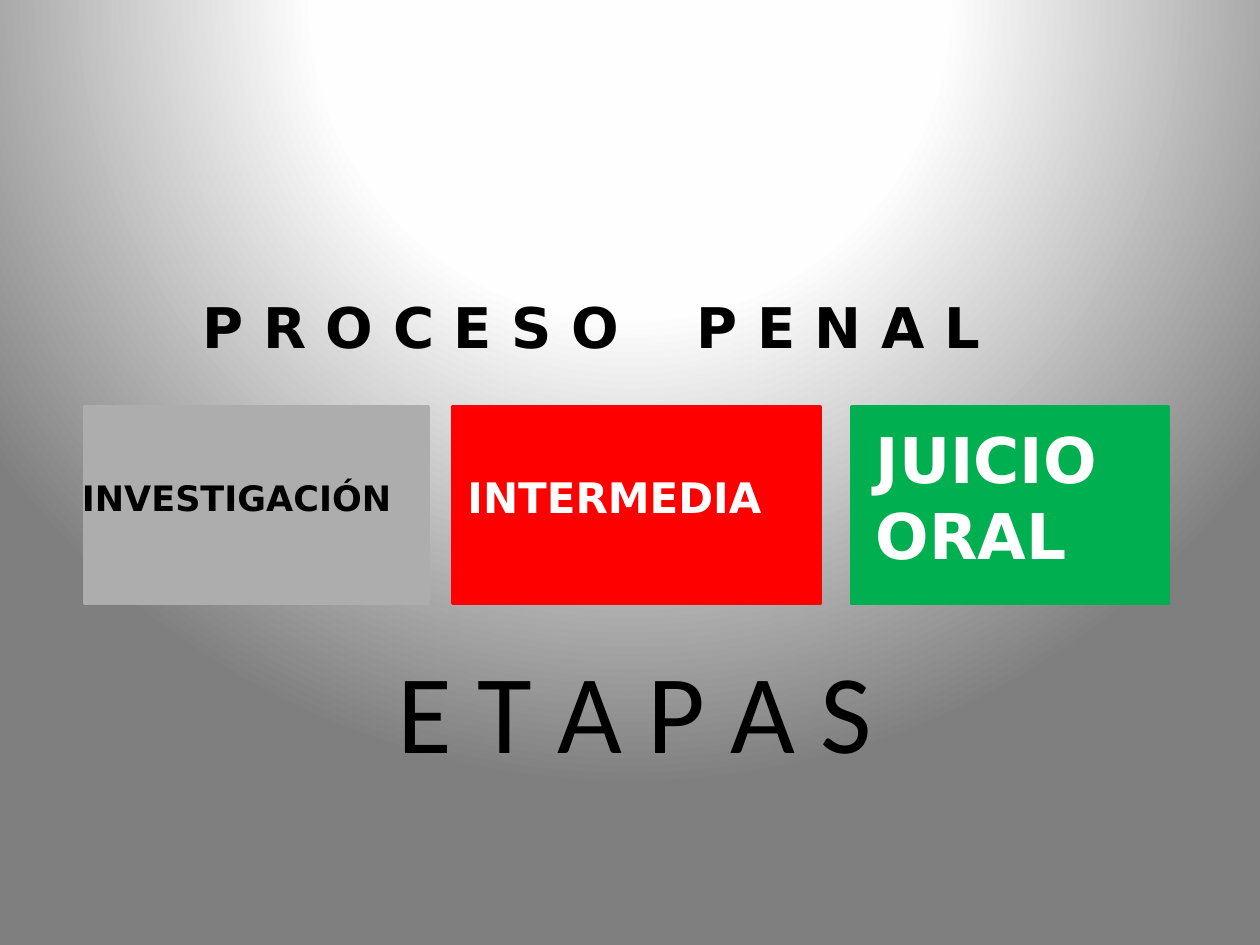
from lxml.etree import fromstring
from pptx import Presentation
from pptx.dml.color import RGBColor
from pptx.enum.shapes import MSO_SHAPE
from pptx.enum.text import MSO_ANCHOR, PP_ALIGN
from pptx.util import Pt

PX = 9144
NS = "http://schemas.openxmlformats.org/drawingml/2006/main"


def tint(hue):
    return RGBColor.from_string(hue)


def style(run, size, face, hue, bold):
    font = run.font
    font.size = Pt(size)
    font.name = face
    font.bold = bold
    font.color.rgb = tint(hue)


deck = Presentation()
deck.slide_width = 1000 * PX
deck.slide_height = 750 * PX
slide = deck.slides.add_slide(deck.slide_layouts[5])

stops = "".join(
    f'<a:gs pos="{pos * 1000}"><a:srgbClr val="{hue}"/></a:gs>'
    for pos, hue in [(0, "FFFFFF"), (40, "FEFEFE"), (100, "7F7F7F")]
)
glow = fromstring(
    f'<a:gradFill xmlns:a="{NS}" rotWithShape="1"><a:gsLst>{stops}</a:gsLst>'
    '<a:path path="circle"><a:fillToRect l="50000" t="-80000" r="50000" b="180000"/>'
    "</a:path></a:gradFill>"
)
slide.background.fill.solid()
solid = slide.element.find(f".//{{{NS}}}solidFill")
solid.getparent().replace(solid, glow)

title = slide.shapes.title
title.left, title.top, title.width, title.height = [n * PX for n in (54, 500, 900, 125)]
title.text_frame.text = "E T A P A S"
title.text_frame.vertical_anchor = MSO_ANCHOR.MIDDLE
line = title.text_frame.paragraphs[0]
line.alignment = PP_ALIGN.CENTER
style(line.runs[0], 64, "Calibri", "000000", False)

for left, width, hue in [(67, 273, "ADADAD"), (359, 292, "FF0000"), (676, 251, "00B050")]:
    panel = slide.shapes.add_shape(
        MSO_SHAPE.RECTANGLE, left * PX, 323 * PX, width * PX, 156 * PX
    )
    panel.shadow.inherit = False
    panel.fill.solid()
    panel.fill.fore_color.rgb = tint(hue)
    panel.line.color.rgb = tint(hue)
    panel.line.width = Pt(2)

labels = [
    (["INVESTIGACIÓN"], (61, 374, 303, 43), 20, "000000", None),
    (["P R O C E S O", " ", "P E N A L"], (157, 228, 650, 62), 32, "000000", None),
    (["INTERMEDIA"], (367, 370, 284, 51), 24, "FFFFFF", "FF0000"),
    (["JUICIO ORAL"], (691, 330, 229, 131), 36, "FFFFFF", "00B050"),
]
for parts, place, size, hue, back in labels:
    label = slide.shapes.add_textbox(*[n * PX for n in place])
    if back:
        label.fill.solid()
        label.fill.fore_color.rgb = tint(back)
    frame = label.text_frame
    frame.word_wrap = True
    frame.margin_left = frame.margin_right = 4 * PX
    frame.margin_top = frame.margin_bottom = 4 * PX
    for part in parts:
        run = frame.paragraphs[0].add_run()
        run.text = part
        style(run, size, "DejaVu Sans", hue, True)
        if part == " ":
            run.font._element.set("spc", "3300")

deck.save("out.pptx")
